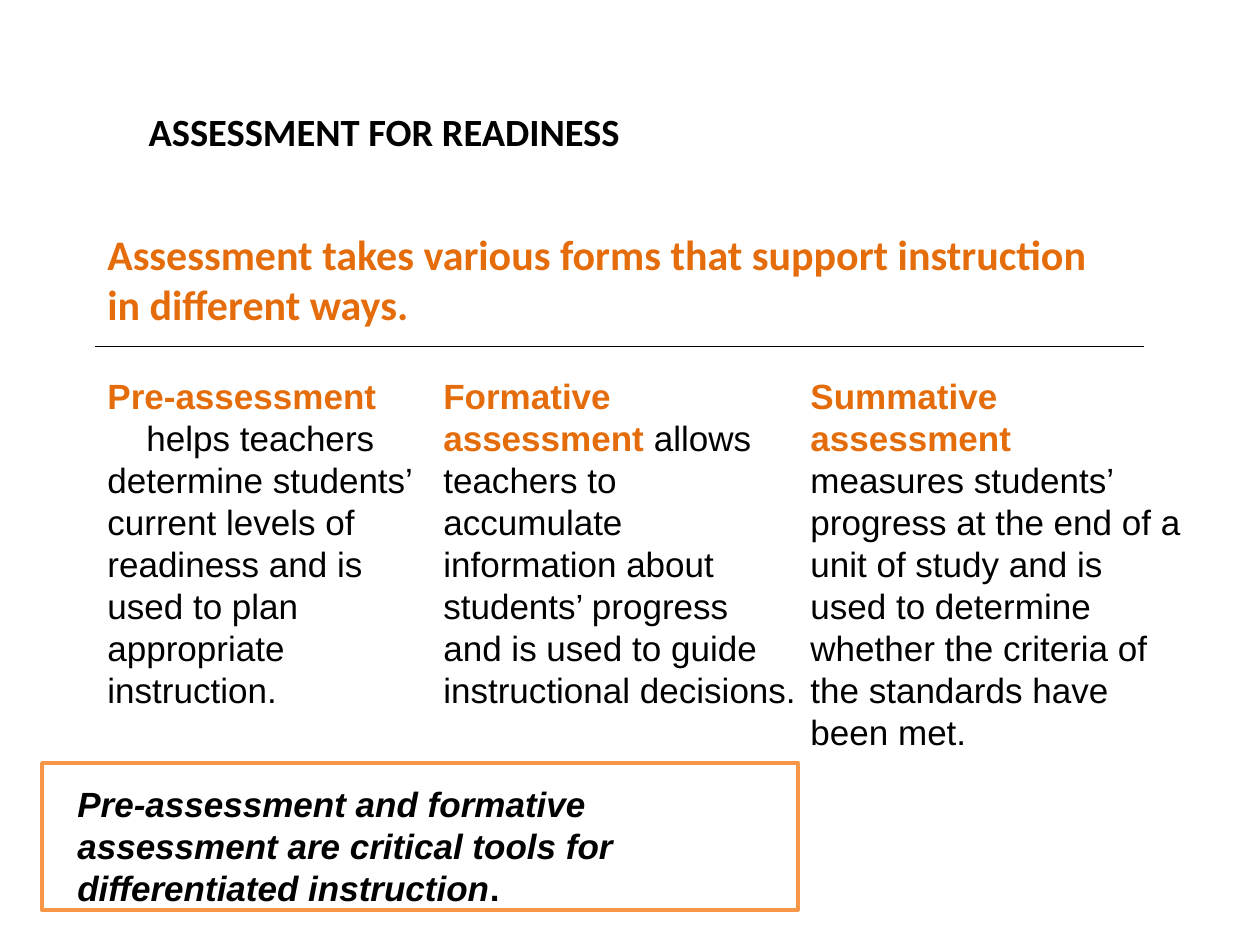
from dataclasses import dataclass

from lxml import etree
from pptx import Presentation
from pptx.dml.color import RGBColor
from pptx.enum.shapes import MSO_CONNECTOR, MSO_SHAPE
from pptx.enum.text import MSO_ANCHOR, PP_ALIGN
from pptx.oxml.ns import qn
from pptx.util import Emu, Pt

STRAIGHT = MSO_CONNECTOR.STRAIGHT
RECTANGLE = MSO_SHAPE.RECTANGLE
TOP = MSO_ANCHOR.TOP
MIDDLE = MSO_ANCHOR.MIDDLE
LEFT = PP_ALIGN.LEFT

EMU_PER_PX = 914400 / 126
ORANGE = "E46C0A"
FRAME_ORANGE = "F79646"
BLACK = "000000"
WHITE = "FFFFFF"

HEADING = {"name": "Calibri", "size": Pt(24), "bold": True, "italic": False}
TITLE = {**HEADING, "size": Pt(22)}
BODY = {"name": "Arial", "size": Pt(20), "bold": False, "italic": False}
TERM = {**BODY, "bold": True}
EMPHASIS = {**TERM, "italic": True}


@dataclass
class Phrase:
    text: str
    style: dict
    color: str = BLACK


@dataclass
class Assessment:
    left: int
    width: int
    paragraphs: list[list[Phrase]]
    last_indent: int = 0


ASSESSMENTS = [
    Assessment(95, 346, [
        [Phrase("Pre-assessment", TERM, ORANGE)],
        [Phrase("helps teachers determine students’ current levels of readiness "
                "and is used to plan appropriate instruction.", BODY)],
    ], last_indent=39),
    Assessment(431, 378, [
        [Phrase("Formative assessment ", TERM, ORANGE),
         Phrase("allows teachers to accumulate information about students’ progress "
                "and is used to guide instructional decisions.", BODY)],
    ]),
    Assessment(798, 399, [
        [Phrase("Summative assessment", TERM, ORANGE)],
        [Phrase("measures students’ progress at the end of a unit of study and is used "
                "to determine whether the criteria of the standards have been met.", BODY)],
    ]),
]


def px(length: int) -> Emu:
    return Emu(round(length * EMU_PER_PX))


def rgb(color: str) -> RGBColor:
    return RGBColor.from_string(color)


def write(frame, paragraphs: list[list[Phrase]], anchor, line_spacing=None) -> None:
    frame.word_wrap = True
    frame.vertical_anchor = anchor
    for index, phrases in enumerate(paragraphs):
        paragraph = frame.add_paragraph() if index else frame.paragraphs[0]
        paragraph.alignment = LEFT
        paragraph.space_before = Pt(0)
        paragraph.line_spacing = line_spacing
        for phrase in phrases:
            run = paragraph.add_run()
            run.text = phrase.text
            for attribute, value in phrase.style.items():
                setattr(run.font, attribute, value)
            run.font.color.rgb = rgb(phrase.color)


def add_text(shapes, left: int, top: int, width: int, height: int,
             paragraphs: list[list[Phrase]], anchor=TOP, line_spacing=None):
    box = shapes.add_textbox(px(left), px(top), px(width), px(height))
    write(box.text_frame, paragraphs, anchor, line_spacing)
    return box


def add_takeaway(slide) -> None:
    takeaway = slide.shapes.add_group_shape()
    border = takeaway.shapes.add_shape(RECTANGLE, px(42), px(763), px(756), px(147))
    border.shadow.inherit = False
    border.fill.solid()
    border.fill.fore_color.rgb = rgb(WHITE)
    border.line.color.rgb = rgb(FRAME_ORANGE)
    border.line.width = Pt(2)
    add_text(takeaway.shapes, 65, 776, 733, 124, [[
        Phrase("Pre-assessment and formative assessment are critical tools for "
               "differentiated instruction", EMPHASIS),
        Phrase(".", TERM),
    ]], line_spacing=Pt(24))


def add_assessment(slide, assessment: Assessment) -> None:
    column = add_text(slide.shapes, assessment.left, 368, assessment.width, 306,
                      assessment.paragraphs, line_spacing=Pt(24))
    if assessment.last_indent:
        properties = column.text_frame.paragraphs[-1]._p.get_or_add_pPr()
        properties.set("indent", str(px(assessment.last_indent)))


def add_divider(slide) -> None:
    divider = slide.shapes.add_connector(STRAIGHT, px(1144), px(346), px(95), px(346))
    divider.line.color.rgb = rgb(BLACK)
    divider.line.width = Pt(0.5)
    etree.SubElement(divider._element.spPr, qn("a:effectLst"))


def add_title(slide) -> None:
    title = slide.shapes.title
    placement = {"left": 136, "top": 95, "width": 1092, "height": 73}
    for attribute, length in placement.items():
        setattr(title, attribute, px(length))
    write(title.text_frame, [[Phrase("ASSESSMENT FOR READINESS", TITLE)]], MIDDLE)


def main() -> None:
    presentation = Presentation()
    presentation.slide_width = px(1260)
    presentation.slide_height = px(945)
    slide = presentation.slides.add_slide(presentation.slide_layouts[5])
    add_title(slide)
    add_takeaway(slide)
    for assessment in ASSESSMENTS:
        add_assessment(slide, assessment)
    add_text(slide.shapes, 95, 242, 1008, 73, [[
        Phrase("Assessment takes various forms that support instruction in different ways.",
               HEADING, ORANGE),
    ]], MIDDLE)
    add_divider(slide)
    presentation.save("out.pptx")


if __name__ == "__main__":
    main()
